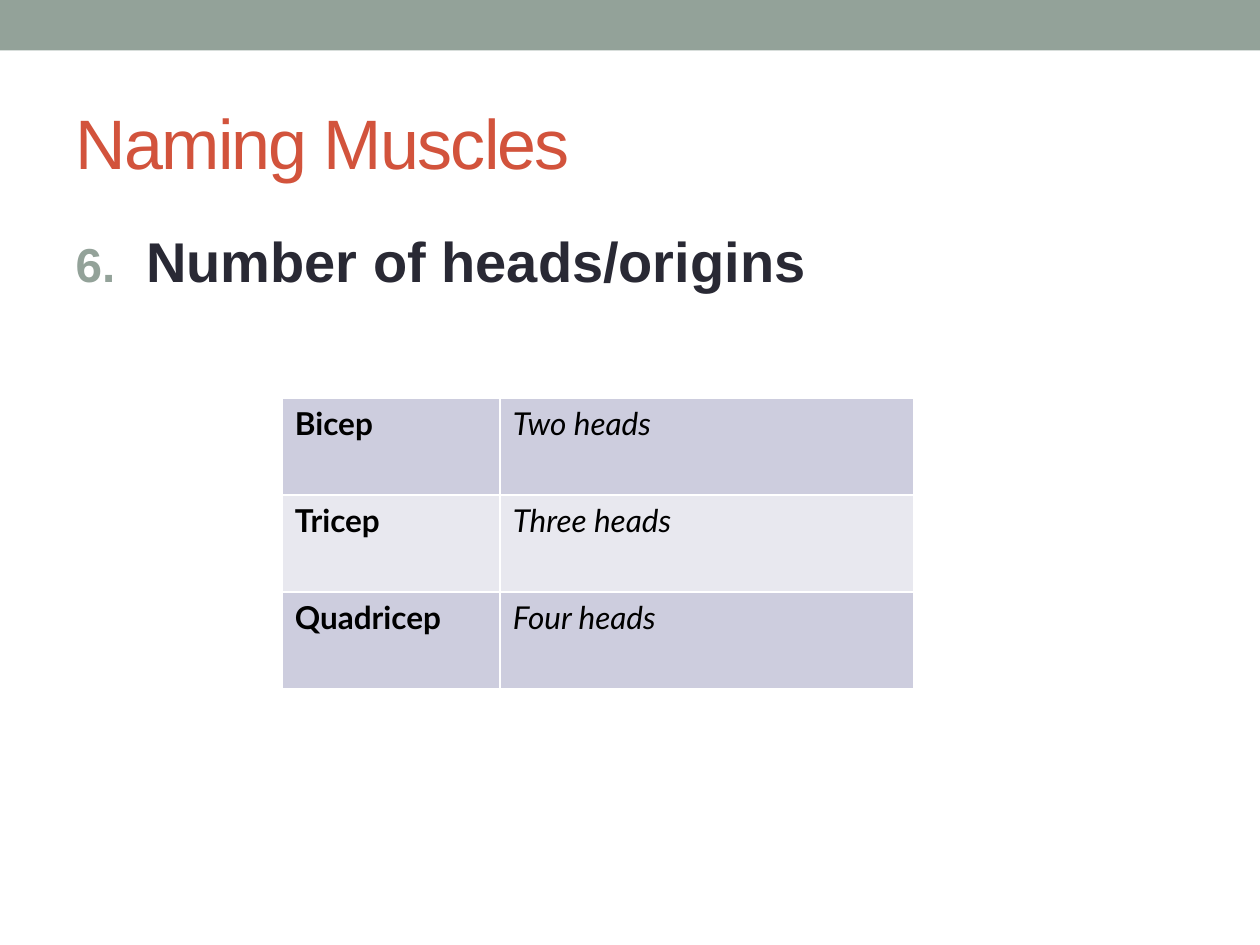
"""Build a slide on muscles named by their number of heads."""
from dataclasses import dataclass

from lxml import etree
from pptx import Presentation
from pptx import util as u
from pptx.dml.color import RGBColor
from pptx.enum import shapes, text
from pptx.oxml import ns

SAGE = RGBColor(0x93, 0xA2, 0x99)
RUST = RGBColor(0xD2, 0x53, 0x3C)
INK = RGBColor(0x29, 0x29, 0x34)
BLACK = RGBColor(0, 0, 0)
WHITE = RGBColor(0xFF, 0xFF, 0xFF)
BANDS = (RGBColor(0xCD, 0xCD, 0xDE), RGBColor(0xE8, 0xE8, 0xEF))
COLUMN_WIDTHS = (1.73, 3.28)
ROW_HEIGHT = 0.77


@dataclass
class Muscle:
    name: str
    heads: str


MUSCLES = (
    Muscle("Bicep", "Two heads"),
    Muscle("Tricep", "Three heads"),
    Muscle("Quadricep", "Four heads"),
)


def add_child(parent, tag: str, **attributes: str):
    return etree.SubElement(parent, ns.qn(tag), attributes)


def style(para, face: str, size: float, color: RGBColor, bold=False, italic=False) -> None:
    font = para.font
    font.name, font.size = face, u.Pt(size)
    font.bold, font.italic = bold, italic
    font.color.rgb = color


def place(box, left: float, top: float, width: float, height: float) -> None:
    box.left, box.top = u.Inches(left), u.Inches(top)
    box.width, box.height = u.Inches(width), u.Inches(height)


def add_band(page) -> None:
    band = page.shapes.add_shape(
        shapes.MSO_SHAPE.RECTANGLE, 0, 0, u.Inches(10), u.Inches(0.4))
    band.shadow.inherit = False
    band.fill.solid()
    band.fill.fore_color.rgb = SAGE
    band.line.fill.background()


def fill_title(box, wording: str) -> None:
    place(box, 0.5, 0.58, 9, 1.08)
    frame = box.text_frame
    frame.text = wording
    frame.auto_size = text.MSO_AUTO_SIZE.NONE
    frame.vertical_anchor = text.MSO_ANCHOR.MIDDLE
    para = frame.paragraphs[0]
    para.alignment = text.PP_ALIGN.LEFT
    style(para, "Arial", 40, RUST)
    para.runs[0].font._element.set("spc", "-100")


def fill_body(box, wording: str, number: int) -> None:
    place(box, 0.5, 1.75, 9, 5.33)
    frame = box.text_frame
    frame.text = wording
    frame.auto_size = text.MSO_AUTO_SIZE.NONE
    para = frame.paragraphs[0]
    style(para, "Arial", 32, INK, bold=True)
    para.space_before = u.Pt(6.4)
    properties = para._p.get_or_add_pPr()
    indent = u.Inches(0.56)
    properties.set("marL", str(indent))
    properties.set("indent", str(-indent))
    defaults = properties.find(ns.qn("a:defRPr"))
    bullet_color = add_child(properties, "a:buClr")
    add_child(bullet_color, "a:srgbClr", val=str(SAGE))
    add_child(properties, "a:buSzPct", val="85000")
    add_child(properties, "a:buFont", typeface="+mj-lt")
    add_child(properties, "a:buAutoNum", type="arabicPeriod", startAt=str(number))
    if defaults is not None:
        properties.append(defaults)


def outline(cell, color: RGBColor, width: float) -> None:
    properties = cell._tc.get_or_add_tcPr()
    for side in ("lnL", "lnR", "lnT", "lnB"):
        line = add_child(properties, f"a:{side}", w=str(u.Pt(width)))
        add_child(add_child(line, "a:solidFill"), "a:srgbClr", val=str(color))


def fill_cell(cell, wording: str, band: RGBColor, bold: bool) -> None:
    cell.text = wording
    style(cell.text_frame.paragraphs[0], "Lato", 18, BLACK, bold, not bold)
    outline(cell, WHITE, 1)
    cell.fill.solid()
    cell.fill.fore_color.rgb = band


def add_muscle_table(page, muscles: tuple[Muscle, ...]) -> None:
    table = page.shapes.add_table(
        len(muscles), len(COLUMN_WIDTHS), u.Inches(2.24), u.Inches(3.16),
        u.Inches(sum(COLUMN_WIDTHS)), u.Inches(ROW_HEIGHT * len(muscles))).table
    table.first_row = False
    for column, width in zip(table.columns, COLUMN_WIDTHS):
        column.width = u.Inches(width)
    for index, muscle in enumerate(muscles):
        band = BANDS[index % len(BANDS)]
        fill_cell(table.cell(index, 0), muscle.name, band, bold=True)
        fill_cell(table.cell(index, 1), muscle.heads, band, bold=False)


def main() -> None:
    deck = Presentation()
    deck.slide_width, deck.slide_height = u.Inches(10), u.Inches(7.5)
    page = deck.slides.add_slide(deck.slide_layouts[1])
    add_band(page)
    fill_title(page.shapes.title, "Naming Muscles")
    fill_body(page.placeholders[1], "Number of heads/origins", 6)
    add_muscle_table(page, MUSCLES)
    deck.save("out.pptx")


if __name__ == "__main__":
    main()
